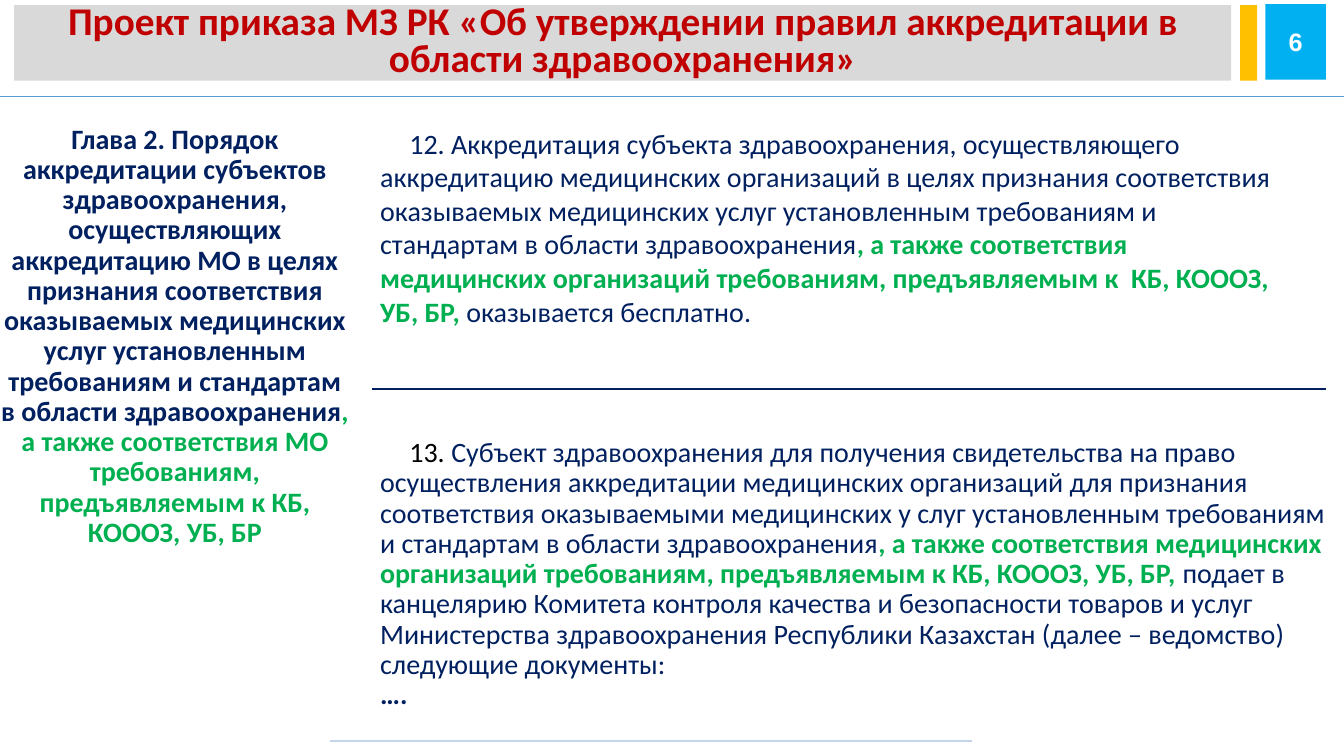
import pptx
import pptx.dml.color
import pptx.enum.shapes
import pptx.enum.text
import pptx.oxml.ns
import pptx.util
import lxml.etree

Inches = pptx.util.Inches
Pt = pptx.util.Pt
Align = pptx.enum.text.PP_ALIGN
Anchor = pptx.enum.text.MSO_ANCHOR
qn = pptx.oxml.ns.qn

NAVY, GREEN, RED, WHITE, BLACK = "002060", "00B050", "C00000", "FFFFFF", "000000"


def color(code):
    return pptx.dml.color.RGBColor.from_string(code)


class Deck:
    font = "Calibri"
    size = 20

    def __init__(self):
        self.prs = pptx.Presentation()
        self.prs.slide_width = Inches(13.33)
        self.prs.slide_height = Inches(7.5)
        self.slide = self.prs.slides.add_slide(self.prs.slide_layouts[4])
        self.slots = {s.placeholder_format.idx: s for s in self.slide.placeholders}

    def fill_text(self, para, parts, size=None, font=None):
        for text, code, bold in parts:
            run = para.add_run()
            run.text = text
            run.font.name = font or self.font
            run.font.size = Pt(size or self.size)
            run.font.bold = bold
            run.font.color.rgb = color(code)

    def paint(self, shape, code):
        shape.fill.solid()
        shape.fill.fore_color.rgb = color(code)

    def block(self, idx, box, paras, inset, anchor=Anchor.TOP, align=Align.LEFT,
              space=1.0, before=0, indent=0, size=None):
        shape = self.slots.pop(idx)
        shape.left, shape.top, shape.width, shape.height = map(Inches, box)
        frame = shape.text_frame
        frame.word_wrap = True
        frame.auto_size = pptx.enum.text.MSO_AUTO_SIZE.NONE
        frame.vertical_anchor = anchor
        frame.margin_left = frame.margin_right = Inches(inset[0])
        frame.margin_top = frame.margin_bottom = Inches(inset[1])
        for i, parts in enumerate(paras):
            para = frame.add_paragraph() if i else frame.paragraphs[0]
            para.alignment = align
            para.line_spacing = space
            para.space_before = Pt(before)
            props = para._p.get_or_add_pPr()
            props.set("marL", "0")
            props.set("indent", str(0 if i else Inches(indent)))
            lxml.etree.SubElement(props, qn("a:buNone"))
            self.fill_text(para, parts, size)
        return shape

    def rect(self, box, fill, text=""):
        kind = pptx.enum.shapes.MSO_SHAPE.RECTANGLE
        shape = self.slide.shapes.add_shape(kind, *map(Inches, box))
        shape.shadow.inherit = False
        shape.line.fill.background()
        self.paint(shape, fill)
        if text:
            frame = shape.text_frame
            frame.vertical_anchor = Anchor.MIDDLE
            frame.paragraphs[0].alignment = Align.CENTER
            self.fill_text(frame.paragraphs[0], [(text, WHITE, True)], 18, "Arial")

    def rule(self, left, right, top, code):
        kind = pptx.enum.shapes.MSO_CONNECTOR.STRAIGHT
        line = self.slide.shapes.add_connector(
            kind, Inches(left), Inches(top), Inches(right), Inches(top))
        line.line.color.rgb = color(code)
        line.line.width = Pt(1)
        lxml.etree.SubElement(line._element.spPr, qn("a:effectLst"))

    def save(self):
        for slot in self.slots.values():
            slot._element.getparent().remove(slot._element)
        self.prs.save("out.pptx")


def main():
    deck = Deck()
    title = deck.block(
        0, (0.14, 0.05, 12.07, 0.75),
        [[("Проект приказа МЗ РК «Об утверждении правил аккредитации в области "
           "здравоохранения»", RED, True)]],
        (0.1, 0.05), Anchor.MIDDLE, Align.CENTER, space=0.8, before=18, size=28)
    deck.paint(title, "D9D9D9")
    deck.rect((12.3, 0.05, 0.17, 0.75), "FFC000")
    deck.rect((12.55, 0.04, 0.6, 0.75), "00B0F0", "6")

    deck.block(
        1, (0, 1.17, 3.47, 6.24),
        [[("Глава 2. Порядок аккредитации субъектов здравоохранения, "
           "осуществляющих аккредитацию МО в целях признания соответствия "
           "оказываемых медицинских услуг установленным требованиям и "
           "стандартам в области здравоохранения", NAVY, True),
          (", а также соответствия МО требованиям, предъявляемым к КБ, "
           "КОООЗ, УБ, БР", GREEN, True)]],
        (0, 0.07), align=Align.CENTER, space=0.9)
    deck.block(
        3, (3.69, 1.17, 9.22, 2.9),
        [[("12. Аккредитация субъекта здравоохранения, осуществляющего "
           "аккредитацию медицинских организаций в целях признания "
           "соответствия оказываемых медицинских услуг установленным "
           "требованиям и стандартам в области здравоохранения", NAVY, False),
          (", а также соответствия медицинских организаций требованиям, "
           "предъявляемым к  КБ, КОООЗ, УБ, БР, ", GREEN, True),
          ("оказывается бесплатно.", NAVY, False)]],
        (0.08, 0.08), indent=0.29)
    deck.block(
        2, (3.69, 4.27, 9.64, 2.65),
        [[("13. ", BLACK, False),
          ("Субъект здравоохранения для получения свидетельства на право "
           "осуществления аккредитации медицинских организаций для признания "
           "соответствия оказываемыми медицинских у слуг установленным "
           "требованиям и стандартам в области здравоохранения", NAVY, False),
          (", а также соответствия медицинских организаций требованиям, "
           "предъявляемым к КБ, КОООЗ, УБ, БР, ", GREEN, True),
          ("подает в канцелярию Комитета контроля качества и безопасности "
           "товаров и услуг Министерства здравоохранения Республики Казахстан "
           "(далее – ведомство) следующие документы:", NAVY, False)],
         [("….", NAVY, True)]],
        (0.08, 0.08), space=0.9, indent=0.29)

    deck.rule(0, 13.33, 0.96, "5B9BD5")
    deck.rule(3.27, 9.64, 7.35, "C4D5EB")
    deck.rule(3.69, 13.15, 3.86, NAVY)
    deck.save()


if __name__ == "__main__":
    main()
